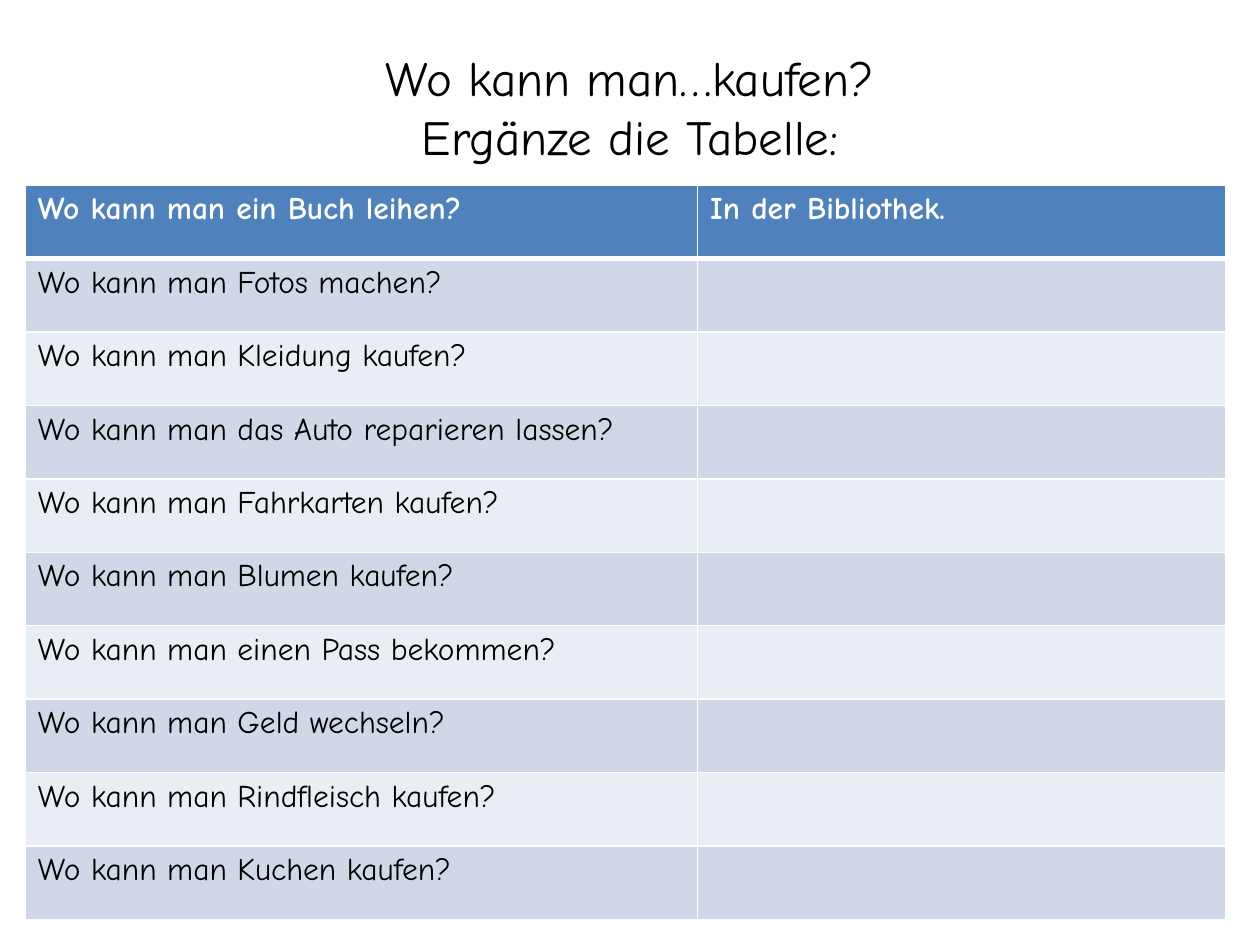
from lxml.etree import SubElement
from pptx import Presentation
from pptx.dml.color import RGBColor
from pptx.enum.text import MSO_ANCHOR, PP_ALIGN
from pptx.oxml.ns import qn
from pptx.util import Inches, Pt

COLORS = {"text": "000000", "header": "4F81BD", "white": "FFFFFF",
          "odd": "D0D8E8", "even": "E9EDF4"}
HEADER = ("Wo kann man ein Buch leihen?", "In der Bibliothek.")
ACTIVITIES = ["Fotos machen", "Kleidung kaufen", "das Auto reparieren lassen",
              "Fahrkarten kaufen", "Blumen kaufen", "einen Pass bekommen",
              "Geld wechseln", "Rindfleisch kaufen", "Kuchen kaufen"]


class Worksheet:
    """Holds the style and the current slide; lengths are shares of the slide."""
    font = "Comic Neue"

    def __init__(self, deck):
        self.width, self.height = deck.slide_width, deck.slide_height
        self.slide = deck.slides.add_slide(deck.slide_layouts[5])

    def box(self, left, top, width, height):
        return (int(left * self.width), int(top * self.height),
                int(width * self.width), int(height * self.height))

    def style(self, paragraph, size, color, bold=False):
        font = paragraph.font
        font.name, font.size, font.bold = self.font, Pt(size), bold
        font.color.rgb = RGBColor.from_string(COLORS[color])

    def title(self, text, *shares):
        heading = self.slide.shapes.title
        heading.left, heading.top, heading.width, heading.height = self.box(*shares)
        frame = heading.text_frame
        frame.text = text
        frame.word_wrap = True
        frame.vertical_anchor = MSO_ANCHOR.MIDDLE
        frame.paragraphs[0].alignment = PP_ALIGN.CENTER
        self.style(frame.paragraphs[0], 28, "text")

    def borders(self, cell, top, bottom):
        properties = cell._tc.get_or_add_tcPr()
        for side, points in (("L", 1), ("R", 1), ("T", top), ("B", bottom)):
            line = SubElement(properties, qn(f"a:ln{side}"), w=str(Pt(points)))
            fill = SubElement(line, qn("a:solidFill"))
            SubElement(fill, qn("a:srgbClr"), val=COLORS["white"])

    def table(self, rows, first_column, *shares):
        left, top, width, height = self.box(*shares)
        grid = self.slide.shapes.add_table(
            len(rows), 2, left, top, width, height).table
        grid.columns[0].width = int(first_column * width)
        grid.columns[1].width = width - grid.columns[0].width
        for r, row in enumerate(rows):
            is_header = r == 0
            fill = "header" if is_header else ("even", "odd")[r % 2]
            for c, text in enumerate(row):
                cell = grid.cell(r, c)
                cell.text = text
                self.style(cell.text_frame.paragraphs[0], 18,
                           "white" if is_header else "text", is_header)
                self.borders(cell, 3 if r == 1 else 1, 3 if is_header else 1)
                cell.fill.solid()
                cell.fill.fore_color.rgb = RGBColor.from_string(COLORS[fill])


def main():
    deck = Presentation()
    deck.slide_width, deck.slide_height = Inches(10), Inches(7.5)
    sheet = Worksheet(deck)

    # Heading
    sheet.title("Wo kann man…kaufen?\vErgänze die Tabelle:",
                0.05, 0.04, 0.9, 0.145)

    # Questions, with answers left open after the example
    questions = [(f"Wo kann man {activity}?", "") for activity in ACTIVITIES]
    sheet.table([HEADER] + questions, 0.56, 0.02, 0.196, 0.953, 0.777)

    deck.save("out.pptx")


if __name__ == "__main__":
    main()
